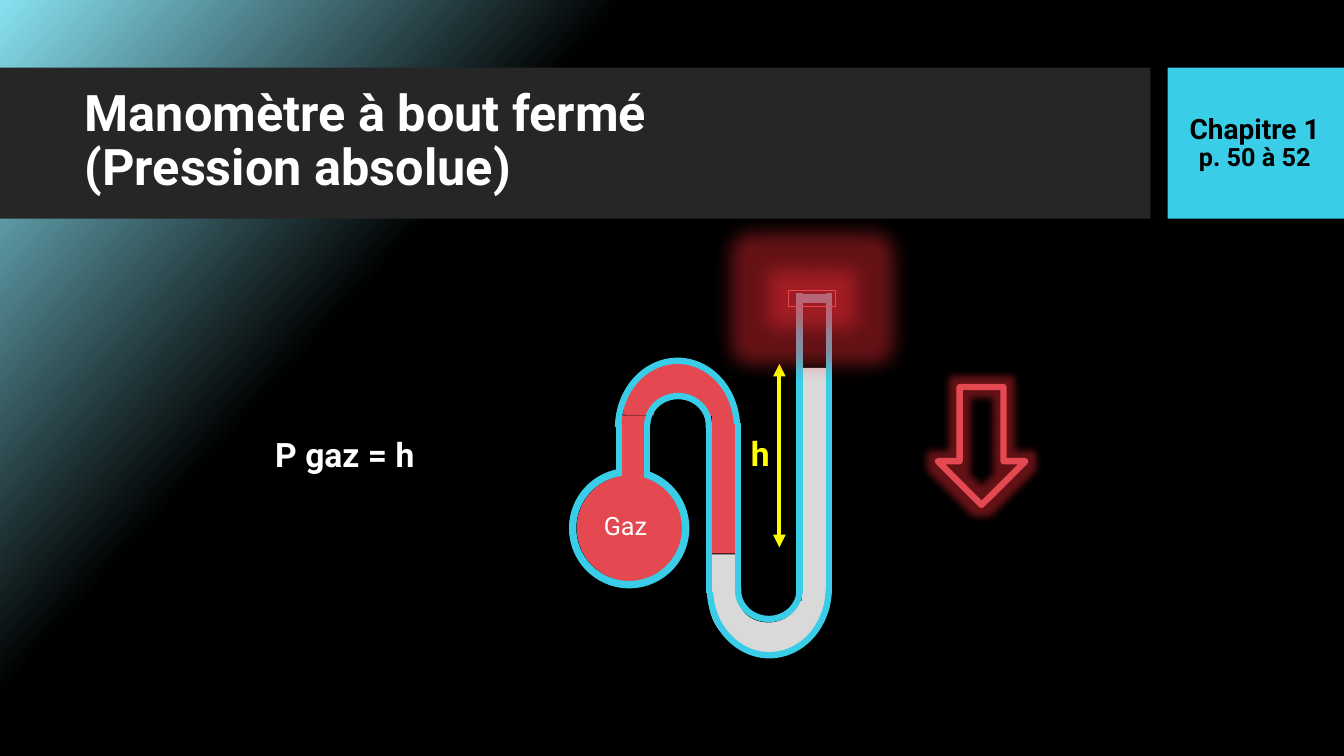
from typing import NamedTuple, Optional

import pptx
import pptx.dml.color
import pptx.enum.shapes
import pptx.enum.text
import pptx.oxml
import pptx.oxml.ns
import pptx.util
from lxml import etree

Inches = pptx.util.Inches
RGBColor = pptx.dml.color.RGBColor
Shape = pptx.enum.shapes.MSO_SHAPE
Anchor = pptx.enum.text.MSO_ANCHOR
Align = pptx.enum.text.PP_ALIGN
AutoSize = pptx.enum.text.MSO_AUTO_SIZE
qn = pptx.oxml.ns.qn

FONT = "Roboto"
BLACK = RGBColor(0x00, 0x00, 0x00)
WHITE = RGBColor(0xFF, 0xFF, 0xFF)
YELLOW = RGBColor(0xFF, 0xFF, 0x00)
CYAN = RGBColor(0x39, 0xCD, 0xE7)
PALE_CYAN = RGBColor(0x88, 0xE1, 0xF1)
RED = RGBColor(0xE4, 0x49, 0x51)
GLOW_RED = RGBColor(0xFF, 0x2E, 0x39)
MERCURY = RGBColor(0xD9, 0xD9, 0xD9)
DARK_GREY = RGBColor(0x26, 0x26, 0x26)

GLASS_WIDTH = 4.5
HALF_RING = (108.66, 0, 0.29)
OUTER_BEND = (108.4, 213.67)
INNER_BEND = (108.4, 3.5)


class Box(NamedTuple):
    left: float
    top: float
    width: float
    height: float


class Part(NamedTuple):
    kind: Shape
    box: Box
    fill: Optional[RGBColor] = None
    line: Optional[RGBColor] = None
    line_width: float = 1
    adjustments: tuple = ()
    rotation: float = 0
    glow: float = 0  # radius in points


class Segment(NamedTuple):
    start: tuple
    end: tuple
    color: RGBColor = CYAN
    width: float = GLASS_WIDTH
    arrows: bool = False


BARS = [
    Part(Shape.RECTANGLE, Box(0, 0.67, 11.41, 1.5), DARK_GREY),
    Part(Shape.RECTANGLE, Box(11.58, 0.67, 1.75, 1.5), CYAN),
]

CONTENTS = [
    Part(Shape.OVAL, Box(5.72, 4.71, 1.08, 1.06), RED),
    Part(Shape.RECTANGLE, Box(6.16, 4.12, 0.24, 0.61), RED),
    Part(Shape.BLOCK_ARC, Box(6.18, 3.6, 1.11, 1.05), RED, adjustments=HALF_RING),
    Part(Shape.RECTANGLE, Box(7.05, 5.5, 0.26, 0.57), MERCURY),
    Part(Shape.BLOCK_ARC, Box(7.03, 5.43, 1.18, 1.05), MERCURY,
         adjustments=HALF_RING, rotation=180),
    Part(Shape.RECTANGLE, Box(7.95, 3.65, 0.26, 2.42), MERCURY),
    Part(Shape.RECTANGLE, Box(7.06, 4.1, 0.24, 1.39), RED),
]

BULB = Part(Shape.BLOCK_ARC, Box(5.65, 4.65, 1.18, 1.18), CYAN, CYAN,
            adjustments=(171.93, 156.56, 0.05))

# Left and right wall, top and bottom of each straight tube
TUBES = [(6.14, 6.42, 4.2, 4.72), (7.03, 7.32, 4.2, 5.88), (7.93, 8.22, 2.91, 5.88)]
WALLS = [Segment((x, top), (x, bottom))
         for left, right, top, bottom in TUBES for x in (left, right)]
CAP = Segment((7.95, 2.96), (8.22, 2.96), width=6)

BENDS = [
    Part(Shape.ARC, box, None, CYAN, GLASS_WIDTH, adjustments, rotation)
    for box, adjustments, rotation in [
        (Box(6.13, 3.58, 1.18, 1.33), OUTER_BEND, 0),
        (Box(6.42, 3.93, 0.61, 0.57), INNER_BEND, 0),
        (Box(7.04, 5.17, 1.18, 1.33), OUTER_BEND, 180),
        (Box(7.32, 5.57, 0.61, 0.57), INNER_BEND, 180),
    ]
]

HEIGHT_ARROW = Segment((7.73, 3.61), (7.73, 5.43), YELLOW, 3, True)
DOWN_ARROW = Part(Shape.UP_ARROW, Box(9.3, 3.84, 0.87, 1.17), None, RED, 4.5,
                  rotation=180, glow=11)
CLOSED_END = Part(Shape.RECTANGLE, Box(7.82, 2.88, 0.47, 0.16), None, RED, glow=28)


def draw_part(shapes, part: Part):
    shape = shapes.add_shape(part.kind, *map(Inches, part.box))
    shape.shadow.inherit = False
    shape.rotation = part.rotation
    for index, value in enumerate(part.adjustments):
        shape.adjustments[index] = value
    if part.fill is None:
        shape.fill.background()
    else:
        shape.fill.solid()
        shape.fill.fore_color.rgb = part.fill
    if part.line is None:
        shape.line.fill.background()
    else:
        shape.line.color.rgb = part.line
        shape.line.width = pptx.util.Pt(part.line_width)
    if part.glow:
        effects = shape._element.spPr.find(qn("a:effectLst"))
        glow = etree.SubElement(effects, qn("a:glow"), rad=str(pptx.util.Pt(part.glow)))
        color = etree.SubElement(glow, qn("a:srgbClr"), val=str(GLOW_RED))
        etree.SubElement(color, qn("a:alpha"), val="40000")
    return shape


def draw_segment(shapes, segment: Segment) -> None:
    connector = shapes.add_connector(
        pptx.enum.shapes.MSO_CONNECTOR.STRAIGHT,
        *map(Inches, segment.start + segment.end))
    connector.line.color.rgb = segment.color
    connector.line.width = pptx.util.Pt(segment.width)
    properties = connector._element.spPr
    if segment.arrows:
        for end in ("a:headEnd", "a:tailEnd"):
            etree.SubElement(properties.find(qn("a:ln")), qn(end), type="triangle")
    etree.SubElement(properties, qn("a:effectLst"))


def write_text(shape, text: str, *, box: Box, sizes: tuple, color: RGBColor = WHITE,
               bold: bool = True, align: Align = Align.LEFT, anchor: Anchor = Anchor.TOP,
               spacing: float = 1.0, wrap: bool = True,
               auto_size: AutoSize = AutoSize.NONE) -> None:
    """Place a shape and fill it with one paragraph per line, one size each."""
    shape.left, shape.top, shape.width, shape.height = map(Inches, box)
    frame = shape.text_frame
    frame.text = text
    frame.word_wrap = wrap
    frame.auto_size = auto_size
    frame.vertical_anchor = anchor
    for paragraph, size in zip(frame.paragraphs, sizes):
        properties = paragraph._p.get_or_add_pPr()
        properties.set("marL", "0")
        properties.set("indent", "0")
        etree.SubElement(properties, qn("a:buNone"))
        paragraph.alignment = align
        paragraph.line_spacing = spacing
        paragraph.space_before = pptx.util.Pt(0)
        for run in paragraph.runs:
            run.font.name = FONT
            run.font.size = pptx.util.Pt(size)
            run.font.bold = bold
            run.font.color.rgb = color


def add_label(shapes, text: str, box: Box, **text_format) -> None:
    write_text(shapes.add_textbox(*map(Inches, box)), text, box=box, **text_format)


def main() -> None:
    presentation = pptx.Presentation()
    presentation.slide_width, presentation.slide_height = Inches(13.33), Inches(7.5)
    slide = presentation.slides.add_slide(presentation.slide_layouts[1])
    shapes = slide.shapes

    # Background
    background = slide.background.fill
    background.gradient()
    background.gradient_angle = 360 - 42
    for stop, color, position in zip(background.gradient_stops, (PALE_CYAN, BLACK), (0, 0.31)):
        stop.color.rgb = color
        stop.position = position

    # Header bars, behind the placeholders
    for index, bar in enumerate(BARS):
        shapes._spTree.insert(2 + index, draw_part(shapes, bar)._element)

    # Title and formula
    write_text(shapes.title, "Manomètre à bout fermé\v(Pression absolue)",
               box=Box(0.74, 0.82, 10.51, 1.18), sizes=(36,), anchor=Anchor.MIDDLE, spacing=0.9)
    write_text(slide.placeholders[1], "P gaz = h", box=Box(0.74, 2.56, 5.36, 3.94), sizes=(24,),
               align=Align.CENTER, anchor=Anchor.MIDDLE, spacing=0.9)

    # Manometer
    draw_segment(shapes, HEIGHT_ARROW)
    manometer = shapes.add_group_shape().shapes
    for part in CONTENTS + [BULB]:
        draw_part(manometer, part)
    for wall in WALLS:
        draw_segment(manometer, wall)
    for bend in BENDS:
        draw_part(manometer, bend)
    draw_segment(manometer, CAP)
    add_label(manometer, "Gaz", Box(5.89, 5.01, 0.69, 0.41), sizes=(18,), bold=False,
              wrap=False, auto_size=AutoSize.SHAPE_TO_FIT_TEXT)

    # Highlights and labels
    draw_part(shapes, DOWN_ARROW)
    add_label(shapes, "h", Box(7.35, 4.25, 0.39, 0.5), sizes=(24,), color=YELLOW,
              wrap=False, auto_size=AutoSize.SHAPE_TO_FIT_TEXT)
    draw_part(shapes, CLOSED_END)
    add_label(shapes, "Chapitre 1\np. 50 à 52", Box(11.56, 0.67, 1.77, 1.51), sizes=(20, 18),
              color=BLACK, align=Align.CENTER, anchor=Anchor.MIDDLE, spacing=0.9)

    presentation.save("out.pptx")


if __name__ == "__main__":
    main()
